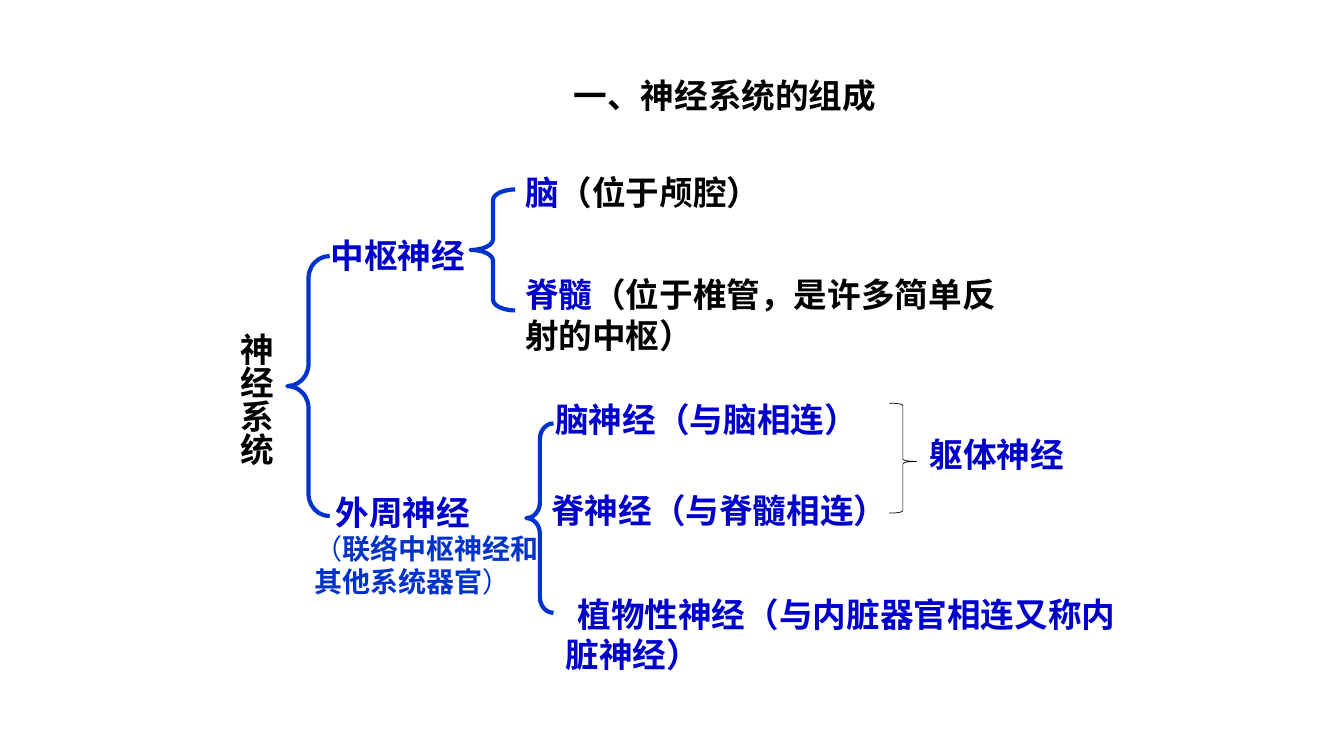
import pptx
import pptx.dml.color
import pptx.enum.shapes
import pptx.enum.text
import pptx.util
from pptx.util import Inches

MSO_SHAPE = pptx.enum.shapes.MSO_SHAPE
AUTO_SIZE = pptx.enum.text.MSO_AUTO_SIZE

THEME = {
    "black": "000000",
    "term": "0000CC",
    "link": "0033CC",
    "body": 24,
    "note": 20,
    "font": "Montserrat",
    "plain_font": "Arial",
    "note_font": "Noto Sans CJK SC",
}


def color(name):
    return pptx.dml.color.RGBColor.from_string(THEME[name])


def place(sp, box):
    for name, value in zip(("left", "top", "width", "height"), box):
        setattr(sp, name, Inches(value))


def write(sp, paragraphs, font="font", size="body", wrap=True):
    """Fill a shape; each paragraph is a list of (text, colour, bold) runs."""
    tf = sp.text_frame
    frame = {
        "word_wrap": wrap,
        "auto_size": AUTO_SIZE.SHAPE_TO_FIT_TEXT,
        "vertical_anchor": pptx.enum.text.MSO_ANCHOR.TOP,
    }
    for name, value in frame.items():
        setattr(tf, name, value)
    for i, runs in enumerate(paragraphs):
        p = tf.add_paragraph() if i else tf.paragraphs[0]
        p.alignment = pptx.enum.text.PP_ALIGN.LEFT
        for text, tone, bold in runs:
            r = p.add_run()
            r.text = text
            values = {"name": THEME[font], "size": pptx.util.Pt(THEME[size]), "bold": bold}
            for name, value in values.items():
                setattr(r.font, name, value)
            r.font.color.rgb = color(tone)


def add_text(s, box, paragraphs, **style):
    sp = s.shapes.add_textbox(*map(Inches, box))
    write(sp, paragraphs, **style)
    return sp


def add_brace(s, box, curve, tip=0.5, kind=MSO_SHAPE.LEFT_BRACE, tone="link", weight=3):
    sp = s.shapes.add_shape(kind, *map(Inches, box))
    sp.shadow.inherit = False
    sp.fill.background()
    sp.line.color.rgb = color(tone)
    sp.line.width = pptx.util.Pt(weight)
    sp.adjustments[0] = curve
    sp.adjustments[1] = tip


def main():
    prs = pptx.Presentation()
    prs.slide_width, prs.slide_height = Inches(13.33), Inches(7.5)
    s = prs.slides.add_slide(prs.slide_layouts[5])

    title = s.shapes.title
    place(title, (5.59, 0.69, 3.21, 0.5))
    write(title, [[("一、神经系统的组成", "black", True)]], font="plain_font", wrap=False)

    add_brace(s, (2.85, 2.54, 0.42, 2.58), 0.52)

    root = add_text(s, (2.18, 3.2, 0.61, 2.6), [[("神经系统", "black", True)]])
    root.text_frame._txBody.bodyPr.set("vert", "eaVert")

    branches = [
        ((3.18, 2.28, 2.6, 0.5), "中枢神经", ""),
        ((3.23, 4.83, 2.28, 0.5), "外周神经", ""),
        ((5.11, 1.66, 4.17, 0.5), "脑", "（位于颅腔）"),
        ((5.11, 2.67, 5.12, 0.91), "脊髓", "（位于椎管，是许多简单反射的中枢）"),
        ((5.41, 3.91, 5.12, 0.5), "脑神经（与脑相连）", ""),
        ((5.37, 4.81, 5.5, 0.5), "脊神经（与脊髓相连）", ""),
    ]
    for box, term, remark in branches:
        runs = [(term, "term", True)]
        if remark:
            runs.append((remark, "black", True))
        add_text(s, box, [runs])

    visceral = add_text(s, (5.51, 5.84, 5.95, 0.91),
                        [[("植物性神经（与内脏器官相连又称内脏神经）", "term", True)]])
    visceral.text_frame.paragraphs[0]._p.get_or_add_pPr().set("indent", str(Inches(0.12)))

    add_brace(s, (4.67, 1.88, 0.44, 1.2), 0.24)
    add_brace(s, (5.22, 4.2, 0.27, 1.88), 0.57)

    add_text(s, (3.02, 5.22, 2.45, 0.77),
             [[("（", "link", False), ("联络中枢神经和", "link", True)],
              [("其他系统器官", "link", True), ("）", "link", False)]],
             font="note_font", size="note", wrap=False)

    add_brace(s, (8.82, 4, 0.27, 1.09), 0.08, 0.53, MSO_SHAPE.RIGHT_BRACE, "black", 0.5)
    add_text(s, (9.12, 4.26, 1.56, 0.5), [[("躯体神经", "term", True)]],
             font="plain_font", wrap=False)

    prs.save("out.pptx")


if __name__ == "__main__":
    main()
